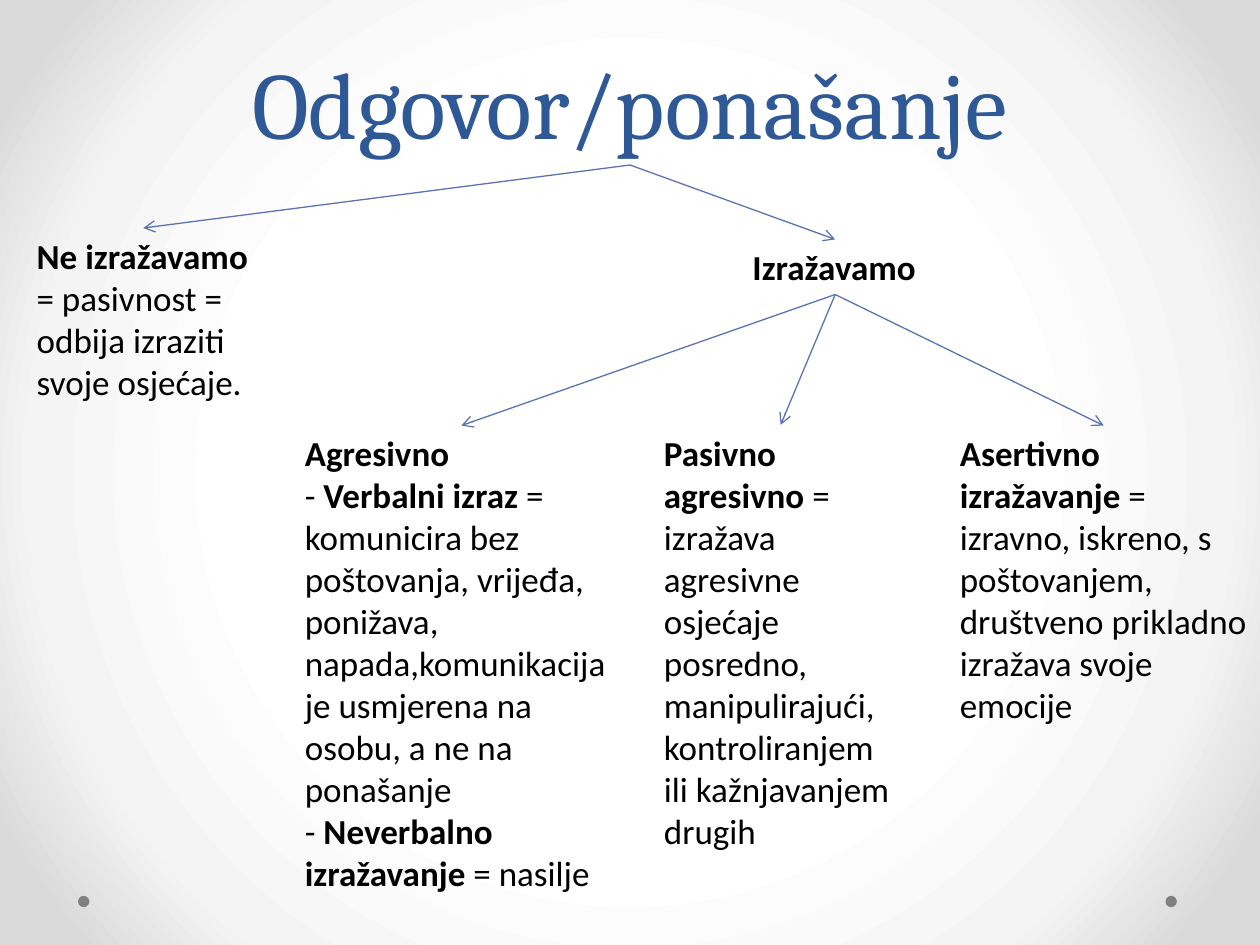
"""Build a one-slide tree of ways to respond and behave."""
from dataclasses import dataclass

from pptx import Presentation
from pptx.dml.color import RGBColor
from pptx.enum.shapes import MSO_CONNECTOR as Line, MSO_SHAPE as Shape
from pptx.enum.text import MSO_ANCHOR as Anchor, MSO_AUTO_SIZE as Fit, PP_ALIGN as Align
from pptx.oxml import parse_xml
from pptx.oxml.ns import nsdecls
from pptx.util import Pt

TOP, BOTTOM = 0, 2


@dataclass(frozen=True)
class Theme:
    """Colours, fonts and type sizes."""
    title_font: str = "Cambria"
    body_font: str = "Calibri"
    title_size: float = 54
    title_leading: float = 58
    body_size: float = 20
    line_width: float = 0.75
    title_color: str = "2F5897"
    body_color: str = "000000"
    line_color: str = "5C72B2"
    dot_color: str = "808080"
    glow: tuple = ((50, "FFFFFF"), (76, "F4F4F4"), (92, "DADADA"))


class Painter:
    """Holds the theme and the current page, and draws each kind of element."""

    def __init__(self, page, theme):
        """Keep the page and its theme."""
        self.page, self.theme = page, theme

    def background(self):
        """Fill the page with a circular gradient."""
        stops = "".join(
            f'<a:gs pos="{place * 1000}"><a:srgbClr val="{color}"/></a:gs>'
            for place, color in self.theme.glow)
        self.page.element.cSld.insert(0, parse_xml(
            f'<p:bg {nsdecls("p", "a")}><p:bgPr><a:gradFill rotWithShape="1">'
            f'<a:gsLst>{stops}</a:gsLst><a:path path="circle">'
            '<a:fillToRect l="50000" t="50000" r="50000" b="50000"/></a:path>'
            '</a:gradFill><a:effectLst/></p:bgPr></p:bg>'))

    def place(self, shape, left, top, width, height):
        """Position a shape, in points."""
        shape.left, shape.top = Pt(left), Pt(top)
        shape.width, shape.height = Pt(width), Pt(height)

    def style(self, span, name, size, color, bold=False):
        """Format one run."""
        span.font.name, span.font.size, span.font.bold = name, Pt(size), bold
        span.font.color.rgb = RGBColor.from_string(color)

    def title(self, words, *area):
        """Fill and format the title placeholder."""
        theme, box = self.theme, self.page.shapes.title
        self.place(box, *area)
        frame = box.text_frame
        frame.text = words
        frame.auto_size, frame.vertical_anchor = Fit.NONE, Anchor.BOTTOM
        para = frame.paragraphs[0]
        para.alignment, para.line_spacing = Align.CENTER, Pt(theme.title_leading)
        self.style(para.runs[0], theme.title_font, theme.title_size, theme.title_color)
        return box

    def text(self, paras, *area, wrap=True):
        """Add a text box of paragraphs made of (words, bold) runs."""
        theme = self.theme
        box = self.page.shapes.add_textbox(*map(Pt, area))
        frame = box.text_frame
        frame.word_wrap, frame.auto_size = wrap, Fit.SHAPE_TO_FIT_TEXT
        for index, spans in enumerate(paras):
            para = frame.add_paragraph() if index else frame.paragraphs[0]
            for words, bold in spans:
                span = para.add_run()
                span.text = words
                self.style(span, theme.body_font, theme.body_size, theme.body_color, bold)
        return box

    def dot(self, left, top, size):
        """Add a small round ornament."""
        dot = self.page.shapes.add_shape(Shape.OVAL, *map(Pt, (left, top, size, size)))
        dot.shadow.inherit = False
        dot.fill.solid()
        dot.fill.fore_color.rgb = RGBColor.from_string(self.theme.dot_color)
        dot.line.fill.background()

    def arrow(self, parent, child):
        """Join the bottom of one box to the top of another."""
        arrow = self.page.shapes.add_connector(Line.STRAIGHT, 0, 0, 0, 0)
        arrow.begin_connect(parent, BOTTOM)
        arrow.end_connect(child, TOP)
        arrow.line.width = Pt(self.theme.line_width)
        arrow.line.color.rgb = RGBColor.from_string(self.theme.line_color)
        arrow.line._get_or_add_ln().append(
            parse_xml(f'<a:tailEnd {nsdecls("a")} type="arrow"/>'))
        arrow.element.spPr.append(parse_xml(f'<a:effectLst {nsdecls("a")}/>'))


def main():
    """Compose the page and save the deck."""
    deck = Presentation()
    deck.slide_width, deck.slide_height = Pt(720), Pt(540)
    painter = Painter(deck.slides.add_slide(deck.slide_layouts[5]), Theme())
    painter.background()
    for left in (666, 44.6):
        painter.dot(left, 511.9, 6.5)

    title = painter.title("Odgovor/ponašanje", 36, -31.7, 648, 126)
    silent = painter.text(
        [[("Ne izražavamo ", True),
          ("= pasivnost = odbija izraziti svoje osjećaje.", False)]],
        13.9, 130.3, 136, 104.7)
    spoken = painter.text([[("Izražavamo", True)]], 422.9, 136.8, 108.7, 31.5, wrap=False)
    aggressive = painter.text(
        [[("Agresivno", True)],
         [("- ", False), ("Verbalni izraz ", True),
          ("= komunicira bez poštovanja, vrijeđa, ponižava, napada,komunikacija "
           "je usmjerena na osobu, a ne na ponašanje", False)],
         [("- ", False), ("Neverbalno izražavanje ", True), ("= nasilje", False)]],
        167.1, 243.2, 193, 296)
    indirect = painter.text(
        [[("Pasivno agresivno ", True),
          ("= izražava agresivne osjećaje posredno, manipulirajući, "
           "kontroliranjem ili kažnjavanjem drugih", False)]],
        372.3, 242.8, 147.6, 271.5)
    assertive = painter.text(
        [[("Asertivno izražavanje ", True),
          ("= izravno, iskreno, s poštovanjem, društveno prikladno "
           "izražava svoje emocije", False)]],
        541.4, 243.2, 178.6, 198.5)

    for parent, children in ((title, (spoken, silent)),
                             (spoken, (aggressive, indirect, assertive))):
        for child in children:
            painter.arrow(parent, child)
    deck.save("out.pptx")


if __name__ == "__main__":
    main()
